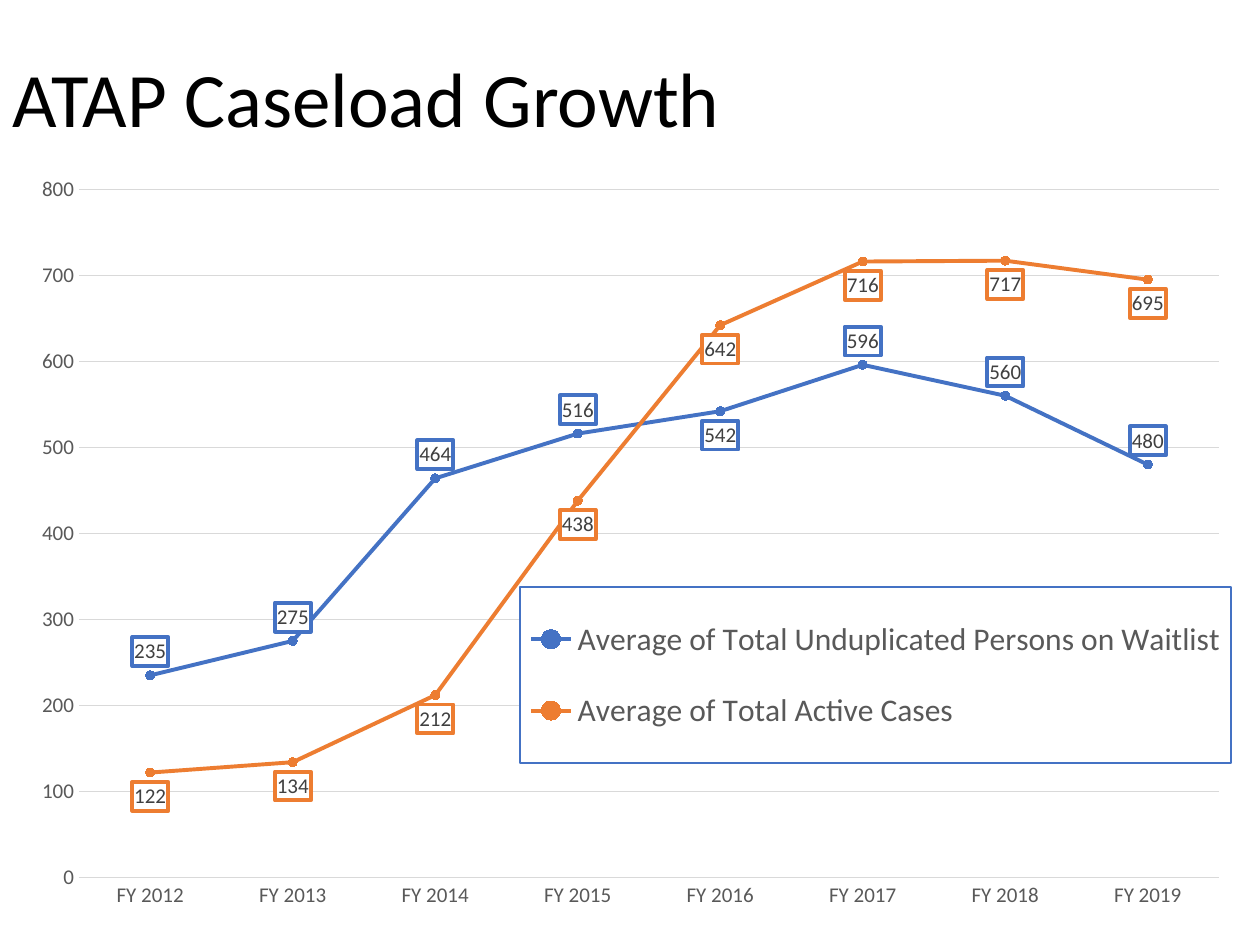
import pptx
import pptx.chart.data
import pptx.dml.color
import pptx.enum.chart
import pptx.enum.text
import pptx.oxml
import pptx.oxml.ns
import pptx.util

Inches, Pt = pptx.util.Inches, pptx.util.Pt
Mark, Place = pptx.enum.chart.XL_MARKER_STYLE, pptx.enum.chart.XL_LABEL_POSITION
Tick = pptx.enum.chart.XL_TICK_MARK

FACE = "Calibri"
BLUE, ORANGE = "4472C4", "ED7D31"
GREY, DARK, PALE = "595959", "404040", "D9D9D9"
YEARS = [f"FY {year}" for year in range(2012, 2020)]
SERIES = [
    ("Average of Total Unduplicated Persons on Waitlist", BLUE, Place.ABOVE,
     (235, 275, 464, 516, 542, 596, 560, 480)),
    ("Average of Total Active Cases", ORANGE, Place.BELOW,
     (122, 134, 212, 438, 642, 716, 717, 695)),
]


def rgb(code):
    return pptx.dml.color.RGBColor.from_string(code)


def style(font, size, color):
    font.name, font.size, font.bold = FACE, Pt(size), False
    font.color.rgb = rgb(color)


def stroke(line, color, width):
    line.color.rgb = rgb(color)
    line.width = Pt(width)


def frame(text, color, width):
    """Put a white, outlined box behind a chart text's txPr element."""
    text.addprevious(pptx.oxml.parse_xml(
        f'<c:spPr {pptx.oxml.ns.nsdecls("c", "a")}>'
        '<a:solidFill><a:srgbClr val="FFFFFF"/></a:solidFill>'
        f'<a:ln w="{Pt(width)}"><a:solidFill><a:srgbClr val="{color}"/>'
        '</a:solidFill></a:ln></c:spPr>'))


def layout(parent, box, inner=False):
    """Fix the place of a chart part, in fractions of the chart."""
    for old in parent.xpath("c:layout"):
        parent.remove(old)
    target = '<c:layoutTarget val="inner"/>' if inner else ""
    modes = "".join(f'<c:{key}Mode val="edge"/>' for key in "xy")
    sizes = "".join(f'<c:{key} val="{val}"/>' for key, val in zip("xywh", box))
    node = pptx.oxml.parse_xml(
        f'<c:layout {pptx.oxml.ns.nsdecls("c")}><c:manualLayout>'
        f'{target}{modes}{sizes}</c:manualLayout></c:layout>')
    if inner:
        parent.insert(0, node)
    else:
        parent.xpath("c:legendPos")[0].addnext(node)


def add_title(slide, left, top, width, height):
    title = slide.shapes.title
    title.left, title.top, title.width, title.height = left, top, width, height
    text = title.text_frame
    text.text = "ATAP Caseload Growth"
    text.vertical_anchor = pptx.enum.text.MSO_ANCHOR.MIDDLE
    para = text.paragraphs[0]
    para.alignment = pptx.enum.text.PP_ALIGN.LEFT
    para.line_spacing = 0.9
    style(para.runs[0].font, 44, "000000")


def format_axes(chart):
    for axis in (chart.category_axis, chart.value_axis):
        axis.major_tick_mark = axis.minor_tick_mark = Tick.NONE
        style(axis.tick_labels.font, 12, GREY)
    stroke(chart.category_axis.format.line, PALE, 0.75)
    values = chart.value_axis
    values.minimum_scale, values.maximum_scale, values.major_unit = 0, 800, 100
    values.format.line.fill.background()
    stroke(values.major_gridlines.format.line, PALE, 0.75)
    values.tick_labels.number_format = "0"
    values.tick_labels.number_format_is_linked = False


def format_series(series, color, place):
    series.smooth = False
    stroke(series.format.line, color, 2.25)
    marker = series.marker
    marker.style, marker.size = Mark.CIRCLE, 5
    marker.format.fill.solid()
    marker.format.fill.fore_color.rgb = rgb(color)
    stroke(marker.format.line, color, 0.75)
    labels = series.data_labels
    labels.show_value, labels.position = True, place
    labels.number_format, labels.number_format_is_linked = "0", False
    style(labels.font, 12, DARK)
    if place == Place.ABOVE:
        # FY 2016 sits between the two lines
        label = series.points[YEARS.index("FY 2016")].data_label
        style(label.font, 12, DARK)
        label.position = Place.BELOW
    for text in series._element.xpath("c:dLbls//c:txPr"):
        frame(text, color, 2.25)


def format_legend(chart):
    chart.has_legend = True
    legend = chart.legend
    legend.position = pptx.enum.chart.XL_LEGEND_POSITION.RIGHT
    legend.include_in_layout = True
    style(legend.font, 18, GREY)
    node = legend._element
    layout(node, (0.41, 0.56, 0.58, 0.23))
    frame(node.xpath("c:txPr")[0], BLUE, 1)


def add_growth(slide, left, top, width, height):
    data = pptx.chart.data.CategoryChartData(number_format="0")
    data.categories = YEARS
    for name, color, place, values in SERIES:
        data.add_series(name, values)
    kind = pptx.enum.chart.XL_CHART_TYPE.LINE_MARKERS
    chart = slide.shapes.add_chart(kind, left, top, width, height, data).chart
    chart.has_title = False
    style(chart.font, 12, "000000")
    plot = chart.plots[0]
    plot.vary_by_categories = False
    format_axes(chart)
    for series, (name, color, place, values) in zip(plot.series, SERIES):
        format_series(series, color, place)
    format_legend(chart)
    area = chart._chartSpace.xpath("c:chart/c:plotArea")[0]
    layout(area, (0.05, 0.04, 0.93, 0.9), inner=True)


def main():
    deck = pptx.Presentation()
    deck.slide_width, deck.slide_height = Inches(10), Inches(7.5)
    slide = deck.slides.add_slide(deck.slide_layouts.get_by_name("Title Only"))
    add_title(slide, Inches(0), Inches(0), Inches(9.98), Inches(1.63))
    add_growth(slide, Inches(0.14), Inches(1.26), Inches(9.73), Inches(6.07))
    deck.save("out.pptx")


if __name__ == "__main__":
    main()
